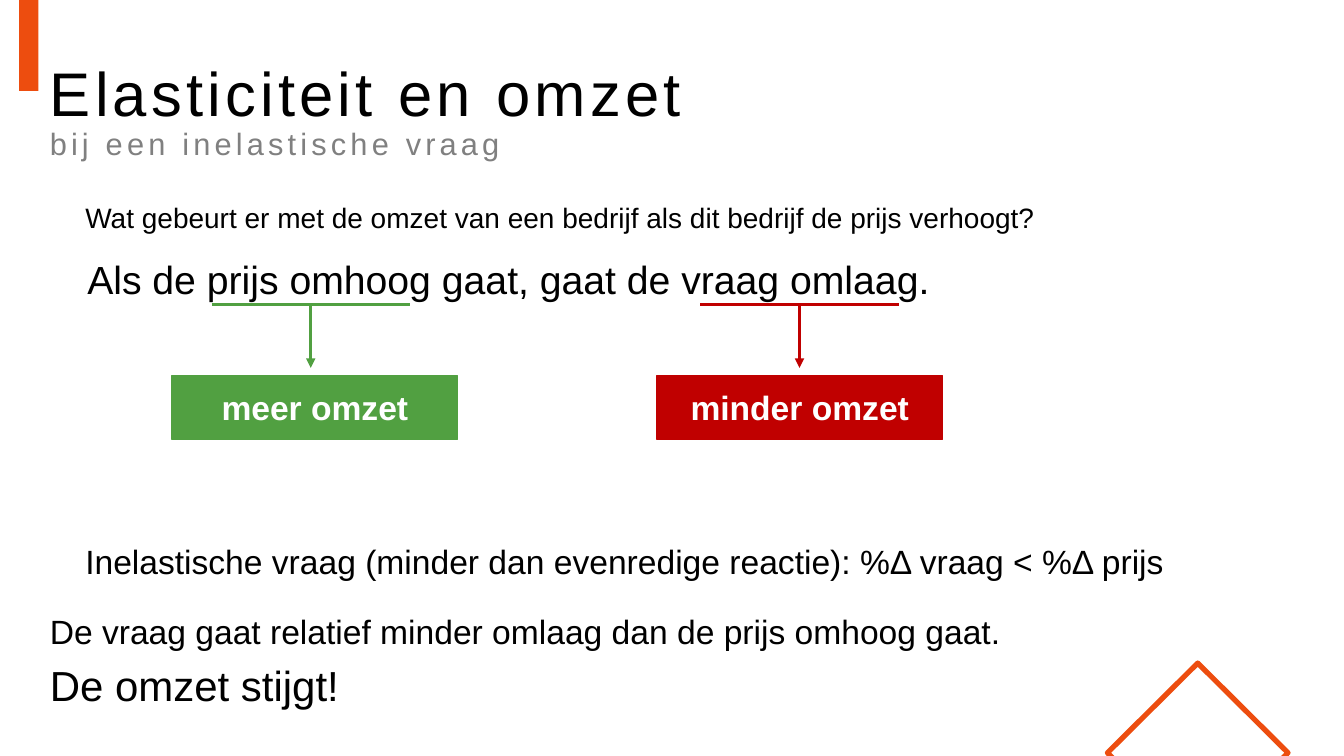
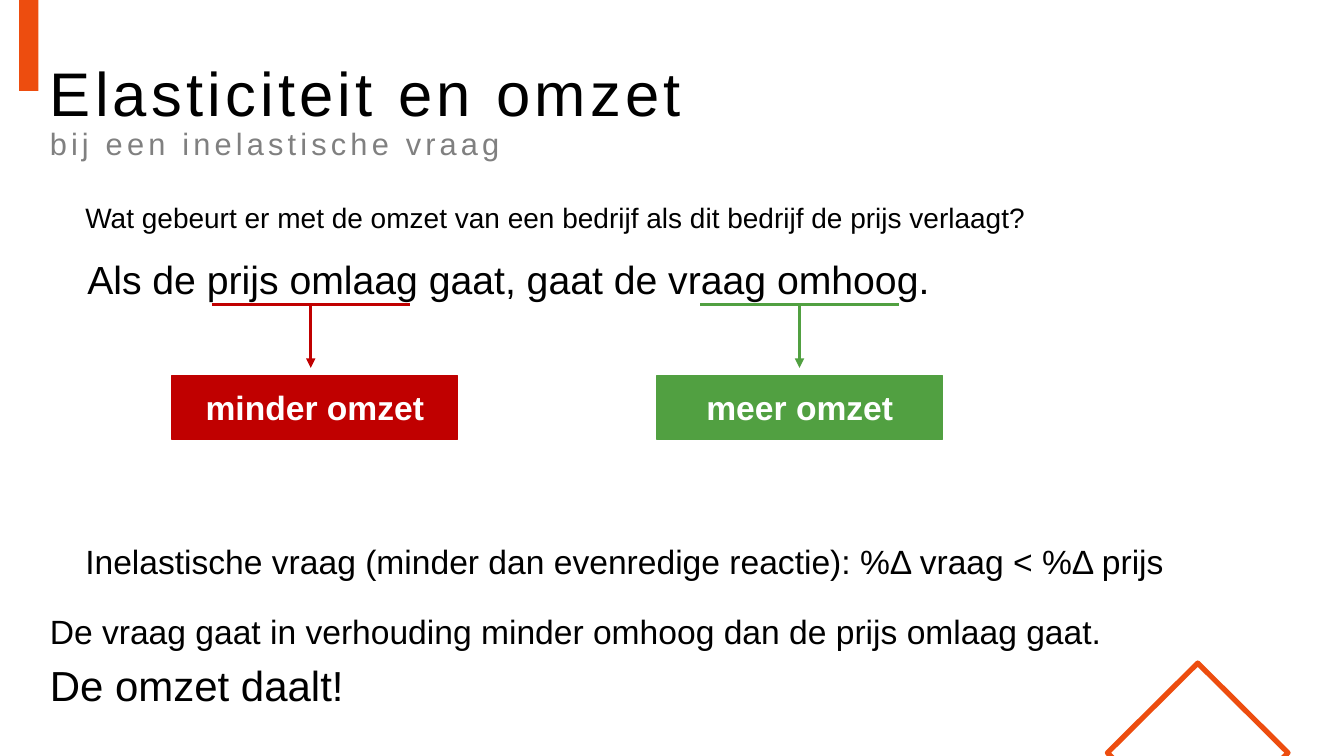
from dataclasses import dataclass

from lxml import etree
from pptx import Presentation
from pptx.dml.color import RGBColor
from pptx.enum.shapes import MSO_CONNECTOR, MSO_SHAPE
from pptx.enum.text import MSO_ANCHOR, MSO_AUTO_SIZE, PP_ALIGN
from pptx.oxml.ns import qn
from pptx.util import Cm, Pt

RECTANGLE = MSO_SHAPE.RECTANGLE
STRAIGHT = MSO_CONNECTOR.STRAIGHT
MIDDLE = MSO_ANCHOR.MIDDLE
TOP = MSO_ANCHOR.TOP
NO_AUTOFIT = MSO_AUTO_SIZE.NONE
LEFT = PP_ALIGN.LEFT
CENTER = PP_ALIGN.CENTER


@dataclass(frozen=True)
class Theme:
    font: str = "Arial"
    text: RGBColor = RGBColor(0x00, 0x00, 0x00)
    subtitle: RGBColor = RGBColor(0x80, 0x80, 0x80)
    inverse: RGBColor = RGBColor(0xFF, 0xFF, 0xFF)
    accent: RGBColor = RGBColor(0xED, 0x4D, 0x0F)
    gain: RGBColor = RGBColor(0x51, 0xA0, 0x41)
    loss: RGBColor = RGBColor(0xC0, 0x00, 0x00)
    title_size: float = 44
    subtitle_size: float = 22
    question_size: float = 20
    sentence_size: float = 28
    body_size: float = 24
    conclusion_size: float = 30
    title_spacing: float = 3
    line_spacing: float = 0.9
    outline_width: float = 3.75
    arrow_width: float = 2.25
    border_width: float = 1


@dataclass(frozen=True)
class Box:
    left: float
    top: float
    width: float
    height: float

    def lengths(self):
        return Cm(self.left), Cm(self.top), Cm(self.width), Cm(self.height)


@dataclass(frozen=True)
class Effect:
    label: str
    color: RGBColor


@dataclass(frozen=True)
class Scenario:
    question: str
    sentence: str
    effects: tuple
    conclusions: tuple


THEME = Theme()
MORE = Effect("meer omzet", THEME.gain)
LESS = Effect("minder omzet", THEME.loss)

TITLE = "Elasticiteit en omzet\vbij een inelastische vraag"
RULE = "Inelastische vraag (minder dan evenredige reactie): %Δ vraag < %Δ prijs"

BAR_BOX = Box(0.48, 0, 0.49, 2.29)
DIAMOND_BOX = Box(27.91, 16.71, 4.55, 2.49)
TITLE_BOX = Box(1, 1, 32.03, 3.68)
QUESTION_BOX = Box(1.9, 4.93, 27.64, 1.35)
SENTENCE_BOX = Box(1.9, 6.32, 21.82, 1.8)
EFFECT_BOXES = (Box(4.34, 9.47, 7.19, 1.6), Box(16.56, 9.47, 7.19, 1.6))
UNDERLINE_BOXES = (Box(5.33, 7.67, 5, 1.6), Box(17.65, 7.67, 5, 1.6))
RULE_BOX = Box(1.9, 13.51, 27.81, 1.27)
CONCLUSION_BOX = Box(1, 15.37, 32.03, 2.69)

SCENARIOS = (
    Scenario(
        "Wat gebeurt er met de omzet van een bedrijf als dit bedrijf de prijs verhoogt?",
        "Als de prijs omhoog gaat, gaat de vraag omlaag.",
        (MORE, LESS),
        ("De vraag gaat relatief minder omlaag dan de prijs omhoog gaat.",
         "De omzet stijgt!"),
    ),
    Scenario(
        "Wat gebeurt er met de omzet van een bedrijf als dit bedrijf de prijs verlaagt?",
        "Als de prijs omlaag gaat, gaat de vraag omhoog.",
        (LESS, MORE),
        ("De vraag gaat in verhouding minder omhoog dan de prijs omlaag gaat.",
         "De omzet daalt!"),
    ),
)


def place(shape, box):
    shape.left, shape.top, shape.width, shape.height = box.lengths()


def format_run(run, size, color=THEME.text, bold=False):
    run.font.name = THEME.font
    run.font.size = Pt(size)
    run.font.color.rgb = color
    run.font.bold = bold


def add_bar(slide, box):
    bar = slide.shapes.add_shape(RECTANGLE, *box.lengths())
    bar.shadow.inherit = False
    bar.fill.solid()
    bar.fill.fore_color.rgb = THEME.accent
    bar.line.fill.background()
    return bar


def add_diamond(slide, box):
    corner = 0.23
    right, bottom = box.left + box.width, box.top + box.height
    points = (
        (box.left + corner, bottom),
        (box.left, bottom - corner),
        (box.left + box.width / 2, box.top),
        (right, bottom - corner),
        (right - corner, bottom),
    )
    start, *others = [(Cm(x), Cm(y)) for x, y in points]
    builder = slide.shapes.build_freeform(*start, scale=1.0)
    builder.add_line_segments(others, close=True)
    diamond = builder.convert_to_shape()
    diamond.shadow.inherit = False
    diamond.fill.background()
    diamond.line.color.rgb = THEME.accent
    diamond.line.width = Pt(THEME.outline_width)
    return diamond


def decorate_layout(layout, slide):
    decorations = (add_bar(slide, BAR_BOX), add_diamond(slide, DIAMOND_BOX))
    for number, shape in enumerate(decorations, start=101):
        shape.element.xpath(".//p:cNvPr")[0].set("id", str(number))
        layout.shapes.element.append(shape.element)


def fill_title(slide, box):
    title = slide.shapes.title
    place(title, box)
    frame = title.text_frame
    frame.auto_size = NO_AUTOFIT
    frame.vertical_anchor = MIDDLE
    paragraph = frame.paragraphs[0]
    paragraph.text = TITLE
    paragraph.alignment = LEFT
    paragraph.line_spacing = THEME.line_spacing
    heading, subtitle = paragraph.runs
    format_run(heading, THEME.title_size)
    format_run(subtitle, THEME.subtitle_size, THEME.subtitle)
    for run in paragraph.runs:
        run.font._element.set("spc", str(int(THEME.title_spacing * 100)))


def fill_conclusions(slide, box, conclusions):
    body = slide.placeholders[1]
    place(body, box)
    frame = body.text_frame
    frame.auto_size = NO_AUTOFIT
    frame.vertical_anchor = TOP
    frame.text = "\n".join(conclusions)
    sizes = (THEME.body_size, THEME.conclusion_size)
    for paragraph, size in zip(frame.paragraphs, sizes):
        paragraph.alignment = LEFT
        paragraph.line_spacing = THEME.line_spacing
        paragraph.space_before = Pt(10)
        properties = paragraph._p.get_or_add_pPr()
        properties.set("marL", "0")
        properties.set("indent", "0")
        etree.SubElement(properties, qn("a:buNone"))
        format_run(paragraph.runs[0], size)


def add_text(slide, box, text, size, alignment=LEFT, space_before=0):
    frame = slide.shapes.add_textbox(*box.lengths()).text_frame
    frame.word_wrap = True
    frame.text = text
    paragraph = frame.paragraphs[0]
    paragraph.alignment = alignment
    paragraph.space_before = Pt(space_before)
    format_run(paragraph.runs[0], size)


def add_line(slide, start, end, color, arrow=False):
    points = [Cm(value) for value in (*start, *end)]
    connector = slide.shapes.add_connector(STRAIGHT, *points)
    connector.line.color.rgb = color
    connector.line.width = Pt(THEME.arrow_width)
    if arrow:
        line = connector.line._get_or_add_ln()
        etree.SubElement(line, qn("a:tailEnd"), type="triangle")
    etree.SubElement(connector.element.spPr, qn("a:effectLst"))


def add_underline_arrow(slide, box, color):
    middle = box.left + box.width / 2
    add_line(slide, (box.left, box.top), (box.left + box.width, box.top), color)
    add_line(slide, (middle, box.top), (middle, box.top + box.height), color, arrow=True)


def add_effect(slide, box, effect):
    shape = slide.shapes.add_shape(RECTANGLE, *box.lengths())
    shape.shadow.inherit = False
    shape.fill.solid()
    shape.fill.fore_color.rgb = effect.color
    shape.line.color.rgb = effect.color
    shape.line.width = Pt(THEME.border_width)
    frame = shape.text_frame
    frame.vertical_anchor = MIDDLE
    frame.text = effect.label
    paragraph = frame.paragraphs[0]
    paragraph.alignment = CENTER
    format_run(paragraph.runs[0], THEME.body_size, THEME.inverse, bold=True)


def fill_scenario(slide, scenario):
    fill_title(slide, TITLE_BOX)
    fill_conclusions(slide, CONCLUSION_BOX, scenario.conclusions)
    add_text(slide, RULE_BOX, RULE, THEME.body_size)
    add_text(slide, QUESTION_BOX, scenario.question, THEME.question_size,
             space_before=THEME.question_size * 0.2)
    add_text(slide, SENTENCE_BOX, scenario.sentence, THEME.sentence_size, CENTER,
             space_before=THEME.sentence_size * 0.2)
    for effect, box, underline in zip(scenario.effects, EFFECT_BOXES, UNDERLINE_BOXES):
        add_effect(slide, box, effect)
        add_underline_arrow(slide, underline, effect.color)


def main():
    presentation = Presentation()
    presentation.slide_width = Cm(33.87)
    presentation.slide_height = Cm(19.05)
    layout = presentation.slide_layouts[1]
    slides = [presentation.slides.add_slide(layout) for _ in SCENARIOS]
    decorate_layout(layout, slides[0])
    for slide, scenario in zip(slides, SCENARIOS):
        fill_scenario(slide, scenario)
    presentation.save("out.pptx")


if __name__ == "__main__":
    main()
